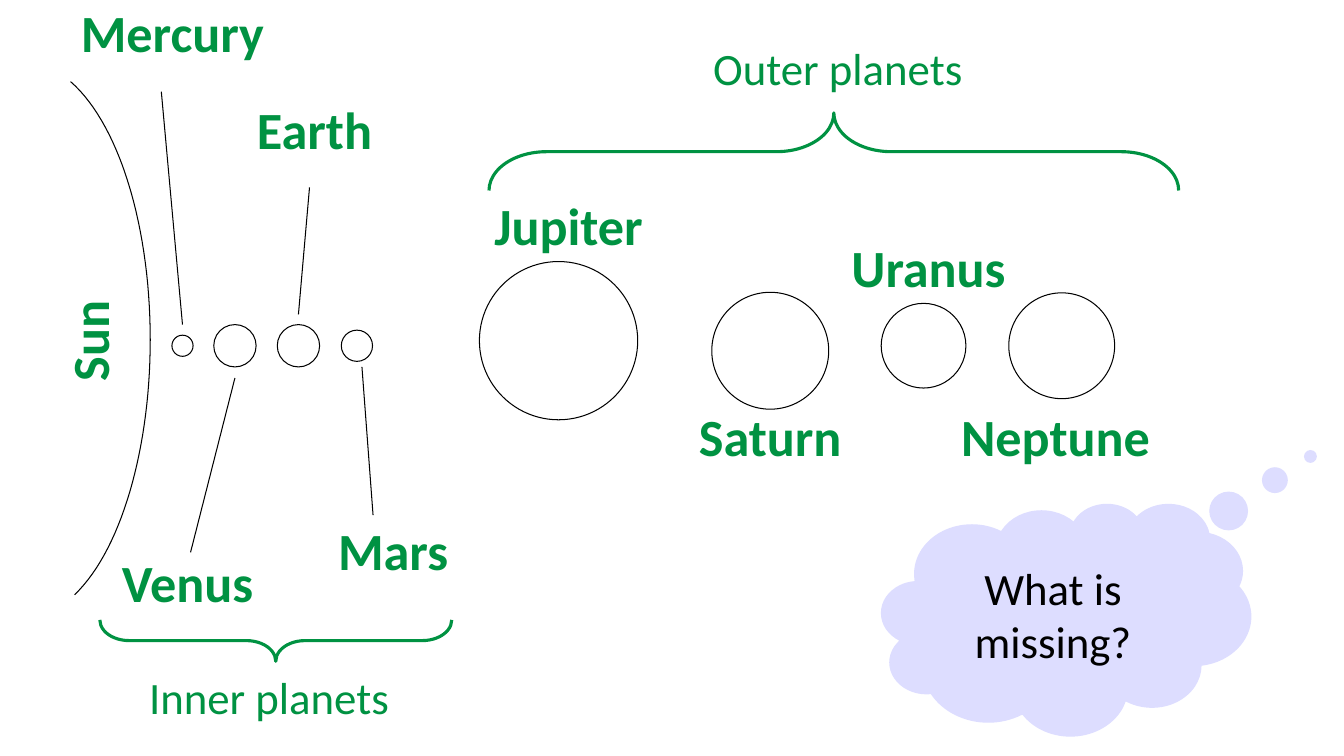
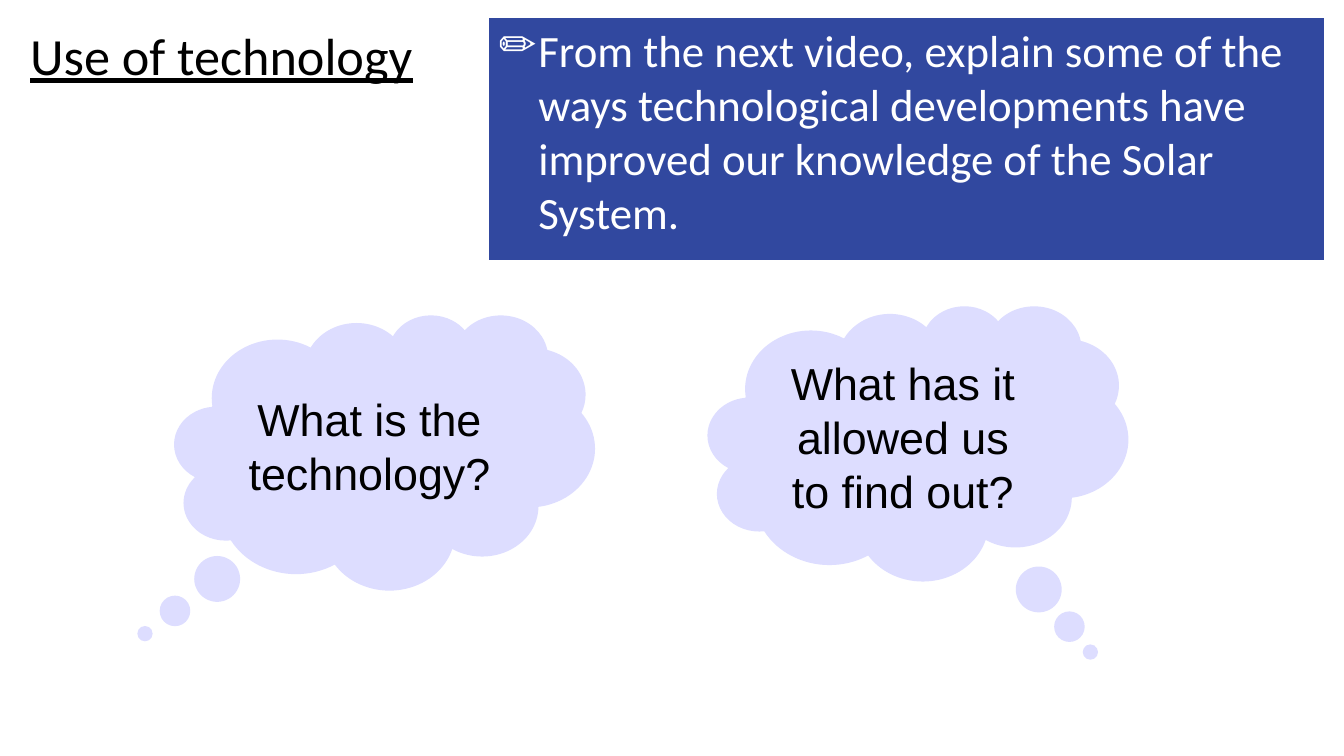
from lxml.etree import SubElement
from pptx import Presentation
from pptx.dml.color import RGBColor
from pptx.enum.shapes import MSO_CONNECTOR, MSO_SHAPE
from pptx.enum.text import MSO_ANCHOR, MSO_AUTO_SIZE, PP_ALIGN
from pptx.oxml.ns import qn
from pptx.util import Pt

PX = 9144  # EMU; 100 px to the inch
BLACK, WHITE = "000000", "FFFFFF"
GREEN, BLUE, LILAC = "009242", "31489F", "DDDDFF"
HEADING_SIZE, BODY_SIZE = 37.3, 32
TITLE_ONLY, BLANK = 5, 6

# name, centre, diameter, label centre, leader from and to
INNER_PLANETS = [
    ("Mercury", (111, 343), 21, (101, 32), (90, 91), (111, 322)),
    ("Venus", (163, 343), 42, (116, 578), (163, 375), (119, 548)),
    ("Earth", (226, 343), 42, (242, 128), (226, 312), (237, 186)),
    ("Mars", (284, 343), 31, (320, 546), (289, 364), (300, 511)),
]
# name, centre, diameter, label centre
OUTER_PLANETS = [
    ("Jupiter", (79, 303), 157, (89, 188)),
    ("Saturn", (289, 313), 116, (289, 398)),
    ("Uranus", (441, 308), 84, (446, 230)),
    ("Neptune", (578, 308), 105, (572, 398)),
]
# start, control, control, end
SUN_EDGE = [
    ((4, 590), (50, 546), (79, 446), (79, 337)),
    ((79, 337), (79, 224), (48, 123), (0, 81)),
]


def color(hex_string):
    return RGBColor.from_string(hex_string)


def emu(*lengths):
    return [round(length * PX) for length in lengths]


def shift(origin, point):
    return origin[0] + point[0], origin[1] + point[1]


def around(center, width, height):
    """Return the box of the given size centred on a point."""
    return center[0] - width / 2, center[1] - height / 2, width, height


def style_line(line, line_color=BLACK, width=0.75):
    line.color.rgb = color(line_color)
    line.width = Pt(width)


def format_paragraph(paragraph, size, text_color, name="Calibri",
                     bold=False, align=PP_ALIGN.CENTER):
    paragraph.alignment = align
    font = paragraph.font
    font.name, font.size, font.bold = name, Pt(size), bold
    font.color.rgb = color(text_color)


def add_outline(slide, preset, box):
    shape = slide.shapes.add_shape(preset, *emu(*box))
    shape.shadow.inherit = False
    shape.fill.background()
    style_line(shape.line)
    return shape


def add_panel(slide, preset, box, fill):
    shape = slide.shapes.add_shape(preset, *emu(*box))
    shape.shadow.inherit = False
    shape.fill.solid()
    shape.fill.fore_color.rgb = color(fill)
    shape.line.fill.background()
    return shape


def add_label(slide, text, center, size=HEADING_SIZE, bold=True, width=241, height=73):
    label = slide.shapes.add_textbox(*emu(*around(center, width, height)))
    label.text_frame.word_wrap = True
    paragraph = label.text_frame.paragraphs[0]
    paragraph.text = text
    format_paragraph(paragraph, size, GREEN, bold=bold)
    return label


def add_caption(slide, text, center):
    add_label(slide, text, center, BODY_SIZE, False, 392, 64)


def add_planet(slide, name, center, diameter, label_center):
    add_outline(slide, MSO_SHAPE.OVAL, around(center, diameter, diameter))
    add_label(slide, name, label_center)


def add_leader(slide, start, end):
    leader = slide.shapes.add_connector(MSO_CONNECTOR.STRAIGHT, *emu(*start, *end))
    style_line(leader.line)
    SubElement(leader._element.spPr, qn("a:effectLst"))


def add_brace(slide, box, rotation, curl):
    """Lay a brace flat in the box; 90 points it up and 270 down."""
    left, top, width, height = box
    center = left + width / 2, top + height / 2
    brace = add_outline(slide, MSO_SHAPE.LEFT_BRACE, around(center, height, width))
    brace.rotation = rotation
    brace.adjustments[0] = curl
    style_line(brace.line, GREEN, 2.25)


def add_cloud(slide, text, box, tail, font_name):
    cloud = add_panel(slide, MSO_SHAPE.CLOUD_CALLOUT, box, LILAC)
    cloud.adjustments[0], cloud.adjustments[1] = tail
    frame = cloud.text_frame
    frame.word_wrap = True
    frame.vertical_anchor = MSO_ANCHOR.MIDDLE
    paragraph = frame.paragraphs[0]
    paragraph.text = text
    format_paragraph(paragraph, BODY_SIZE, BLACK, font_name)


def curve_point(curve, t):
    """Return the point at t on a cubic Bezier curve."""
    weights = ((1 - t) ** 3, 3 * t * (1 - t) ** 2, 3 * t ** 2 * (1 - t), t ** 3)
    return tuple(sum(weight * point[axis] for weight, point in zip(weights, curve))
                 for axis in (0, 1))


def add_sun(slide, origin, steps=30):
    points = [emu(*shift(origin, curve_point(curve, step / steps)))
              for curve in SUN_EDGE for step in range(steps + 1)]
    builder = slide.shapes.build_freeform(*points[0])
    builder.add_line_segments(points[1:], close=False)
    edge = builder.convert_to_shape()
    edge.shadow.inherit = False
    edge.fill.background()
    style_line(edge.line)
    add_label(slide, "Sun", shift(origin, (18, 338))).rotation = 270


def add_inner_planets(slide, origin):
    add_sun(slide, origin)
    for name, center, diameter, label_center, start, end in INNER_PLANETS:
        add_planet(slide, name, shift(origin, center), diameter,
                   shift(origin, label_center))
        add_leader(slide, shift(origin, start), shift(origin, end))
    add_brace(slide, (*shift(origin, (29, 615)), 349, 41), 270, 0.71)
    add_caption(slide, "Inner planets", shift(origin, (197, 691)))


def add_outer_planets(slide, origin):
    for name, center, diameter, label_center in OUTER_PLANETS:
        add_planet(slide, name, shift(origin, center), diameter,
                   shift(origin, label_center))
    add_brace(slide, (*shift(origin, (10, 77)), 684, 77), 90, 0.74)
    add_caption(slide, "Outer planets", shift(origin, (356, 32)))


def add_title(slide, text, box):
    title = slide.shapes.title
    title.left, title.top, title.width, title.height = emu(*box)
    frame = title.text_frame
    frame.text = text
    frame.word_wrap = True
    frame.auto_size = MSO_AUTO_SIZE.NONE
    frame.vertical_anchor = MSO_ANCHOR.TOP
    paragraph = frame.paragraphs[0]
    format_paragraph(paragraph, HEADING_SIZE, BLACK, align=PP_ALIGN.LEFT)
    paragraph.font.underline = True


def add_task(slide, text, box):
    panel = add_panel(slide, MSO_SHAPE.RECTANGLE, box, BLUE)
    frame = panel.text_frame
    frame.word_wrap = True
    frame.vertical_anchor = MSO_ANCHOR.TOP
    paragraph = frame.paragraphs[0]
    paragraph.text = text
    format_paragraph(paragraph, BODY_SIZE, WHITE, align=PP_ALIGN.LEFT)
    properties = paragraph._p.get_or_add_pPr()
    indent, = emu(39)
    properties.set("marL", str(indent))
    properties.set("indent", str(-indent))
    SubElement(properties, qn("a:buChar")).set("char", "✏")
    # The bullet has to come before the default run properties.
    properties.insert(0, properties[-1])


def build_planets_slide(presentation):
    slide = presentation.slides.add_slide(presentation.slide_layouts[BLANK])
    add_inner_planets(slide, (70, 0))
    add_outer_planets(slide, (475, 35))
    add_cloud(slide, "What is missing?", (874, 499, 367, 231), (0.66, -0.7), "Calibri")


def build_technology_slide(presentation):
    slide = presentation.slides.add_slide(presentation.slide_layouts[TITLE_ONLY])
    add_title(slide, "Use of technology", (20, 18, 475, 73))
    add_task(slide, "From the next video, explain some of the ways technological "
             "developments have improved our knowledge of the Solar System.",
             (485, 18, 828, 240))
    for text, left, top, tail in [
        ("What is the technology?", 173, 312, (-0.57, 0.66)),
        ("What has it allowed us to find out?", 702, 303, (0.41, 0.76)),
    ]:
        add_cloud(slide, text, (left, top, 417, 273), tail, "Arial")


def main():
    presentation = Presentation()
    presentation.slide_width, presentation.slide_height = emu(1333, 750)
    build_planets_slide(presentation)
    build_technology_slide(presentation)
    presentation.save("out.pptx")


if __name__ == "__main__":
    main()
